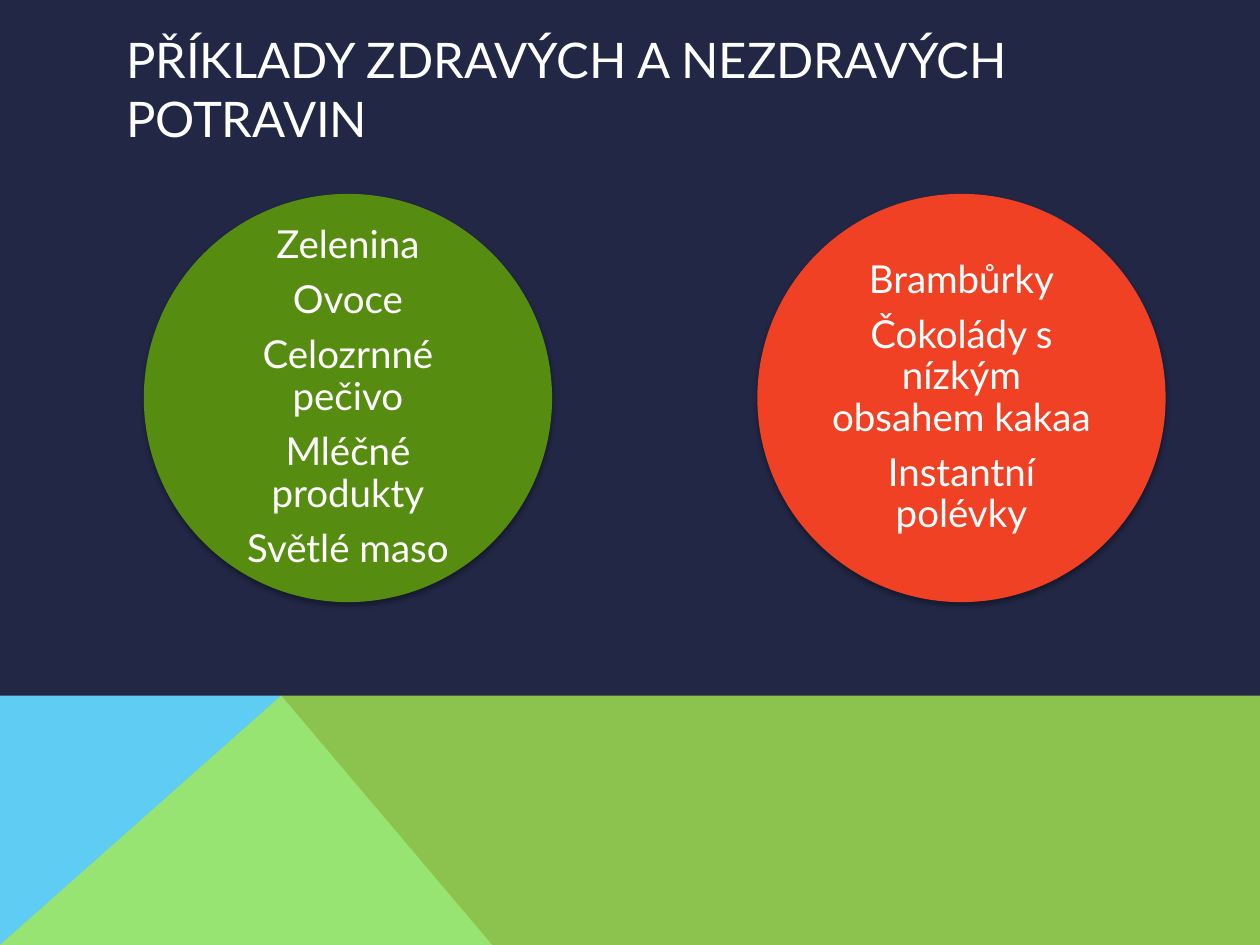
from lxml.etree import SubElement
from pptx import Presentation
from pptx.dml.color import RGBColor
from pptx.enum.shapes import MSO_SHAPE as SHAPE
from pptx.enum.text import MSO_ANCHOR as ANCHOR, PP_ALIGN as ALIGN
from pptx.oxml.ns import qn
from pptx.util import Pt

WIDTH, HEIGHT = 720, 540
FONT, WHITE = "Lato", "FFFFFF"


def color(value):
    return RGBColor.from_string(value)


def add_run(p, text, size):
    r = p.add_run()
    r.text = text
    r.font.name = FONT
    r.font.size = Pt(size)
    r.font.color.rgb = color(WHITE)


def add_polygon(s, points, fill, alpha=None):
    start, *rest = [(Pt(x), Pt(y)) for x, y in points]
    builder = s.shapes.build_freeform(*start, scale=1.0)
    builder.add_line_segments(rest, close=True)
    sp = builder.convert_to_shape()
    sp.shadow.inherit = False
    sp.line.fill.background()
    sp.fill.solid()
    sp.fill.fore_color.rgb = color(fill)
    if alpha:
        clr = sp._element.spPr.find(qn("a:solidFill"))[0]
        SubElement(clr, qn("a:alpha"), val=str(alpha * 1000))


def add_shadow(sp):
    sp.shadow.inherit = False
    effects = sp._element.spPr.find(qn("a:effectLst"))
    outer = SubElement(effects, qn("a:outerShdw"), blurRad=str(Pt(3.1)),
                       dist=str(Pt(1.8)), dir="5400000", rotWithShape="0")
    clr = SubElement(outer, qn("a:srgbClr"), val="000000")
    SubElement(clr, qn("a:alpha"), val="35000")


def add_footer(s, x, y, w, h):
    right, bottom = x + w, y + h
    peak = (x + 160.7, y)
    add_polygon(s, [(x, bottom), (x, y), peak, (x + 281.25, bottom)], "5ECCF3")
    add_polygon(s, [(x, bottom), peak, (right, y), (right, bottom)], "A7EA52", 80)


def add_title(s, x, y, w, h, text):
    tf = s.shapes.add_textbox(Pt(x), Pt(y), Pt(w), Pt(h)).text_frame
    tf.word_wrap = True
    tf.vertical_anchor = ANCHOR.MIDDLE
    add_run(tf.paragraphs[0], text, 28)


def add_food_circle(s, x, y, size, fill, foods):
    sp = s.shapes.add_shape(SHAPE.OVAL, Pt(x), Pt(y), Pt(size), Pt(size))
    sp.fill.solid()
    sp.fill.fore_color.rgb = color(fill)
    sp.line.fill.background()
    add_shadow(sp)
    tf = sp.text_frame
    tf.word_wrap = True
    tf.vertical_anchor = ANCHOR.MIDDLE
    tf.margin_left = tf.margin_right = tf.margin_top = tf.margin_bottom = Pt(2.2)
    for i, food in enumerate(foods):
        p = tf.add_paragraph() if i else tf.paragraphs[0]
        p.alignment = ALIGN.CENTER
        p.line_spacing = 0.9
        p.space_after = Pt(7.7)
        add_run(p, food, 22)


def main():
    prs = Presentation()
    prs.slide_width, prs.slide_height = Pt(WIDTH), Pt(HEIGHT)
    s = prs.slides.add_slide(prs.slide_layouts[6])
    s.background.fill.solid()
    s.background.fill.fore_color.rgb = color("212745")

    add_footer(s, 0, 397.5, WIDTH, HEIGHT - 397.5)
    add_title(s, 65, 29, 655, 43, "PŘÍKLADY ZDRAVÝCH A NEZDRAVÝCH POTRAVIN")
    add_food_circle(s, 82.2, 110.8, 233.3, "568D11", [
        "Zelenina", "Ovoce", "Celozrnné pečivo", "Mléčné produkty", "Světlé maso"])
    add_food_circle(s, 432.8, 110.8, 233.3, "F14124", [
        "Brambůrky", "Čokolády s nízkým obsahem kakaa", "Instantní polévky"])
    prs.save("out.pptx")


if __name__ == "__main__":
    main()
